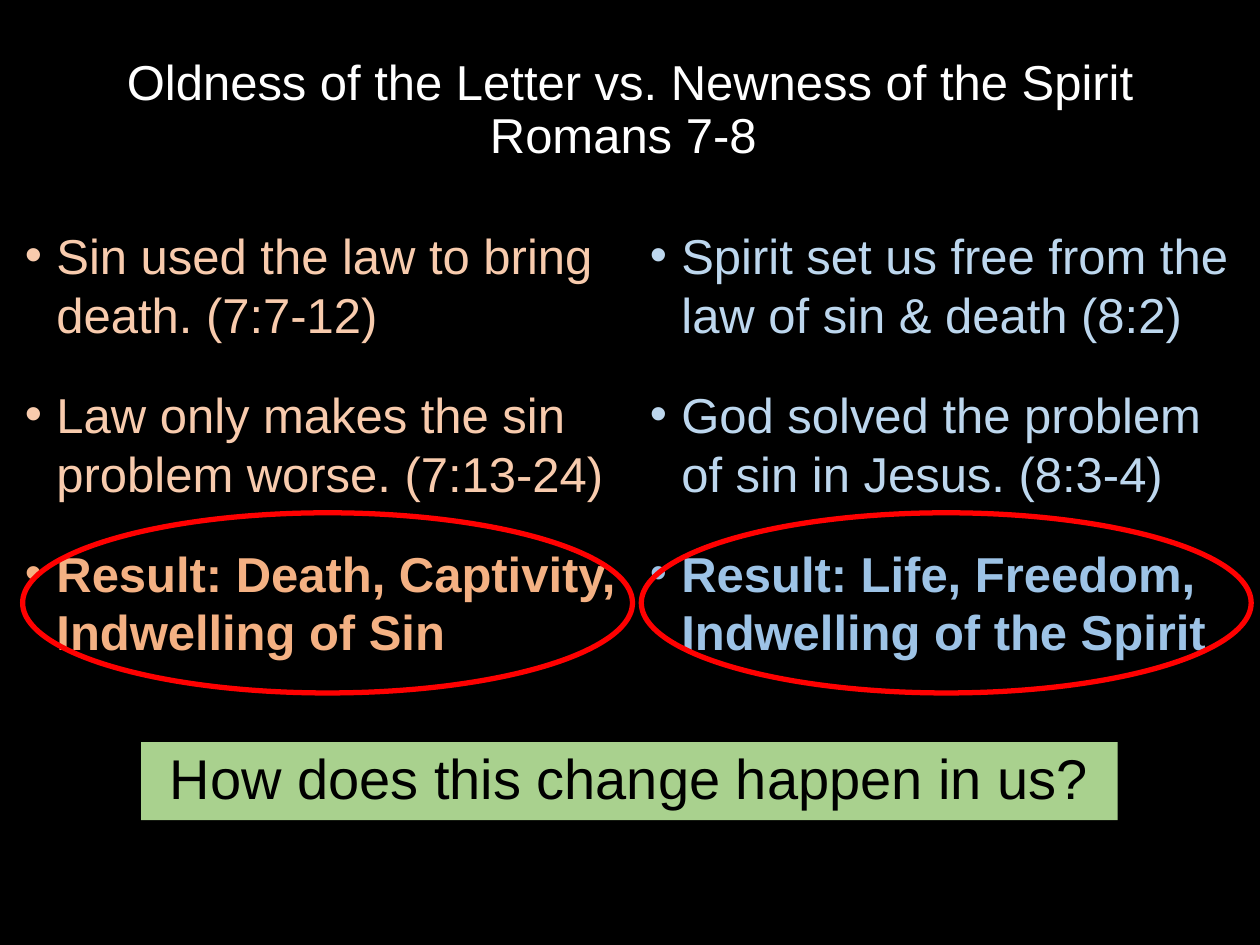
import pptx
import pptx.dml.color
import pptx.enum.shapes
import pptx.enum.text
import pptx.oxml.ns
import pptx.util
from lxml import etree

Inches = pptx.util.Inches
Pt = pptx.util.Pt
RGBColor = pptx.dml.color.RGBColor
Align = pptx.enum.text.PP_ALIGN
Anchor = pptx.enum.text.MSO_ANCHOR
ShapeType = pptx.enum.shapes.MSO_SHAPE

BLACK = RGBColor(0x00, 0x00, 0x00)
WHITE = RGBColor(0xFF, 0xFF, 0xFF)
PEACH = RGBColor(0xF8, 0xCB, 0xAD)
ORANGE = RGBColor(0xF4, 0xB1, 0x83)
PALE_BLUE = RGBColor(0xBD, 0xD7, 0xEE)
BLUE = RGBColor(0x9D, 0xC3, 0xE6)
GREEN = RGBColor(0xA9, 0xD1, 0x8E)
RED = RGBColor(0xFF, 0x00, 0x00)

LETTER_POINTS = [
    "Sin used the law to bring death. (7:7-12)",
    "Law only makes the sin problem worse. (7:13-24)",
    "Result: Death, Captivity, Indwelling of Sin",
]
SPIRIT_POINTS = [
    "Spirit set us free from the law of sin & death (8:2)",
    "God solved the problem of sin in Jesus. (8:3-4)",
    "Result: Life, Freedom, Indwelling of the Spirit",
]


def add_run(paragraph, text, color, size=28, bold=False):
    """Append one formatted run to the paragraph."""
    run = paragraph.add_run()
    run.text = text
    run.font.name = "Arial"
    run.font.size = Pt(size)
    run.font.bold = bold
    run.font.color.rgb = color


def add_bullet(paragraph):
    """Give the paragraph a round bullet with a hanging indent."""
    properties = paragraph._p.get_or_add_pPr()
    properties.set("marL", str(Inches(0.25)))
    properties.set("indent", str(-Inches(0.25)))
    font = etree.SubElement(properties, pptx.oxml.ns.qn("a:buFont"))
    font.set("typeface", "Arial")
    bullet = etree.SubElement(properties, pptx.oxml.ns.qn("a:buChar"))
    bullet.set("char", "•")


def add_title(slide, left, top, width, height):
    """Place the centred two-line title in the given box."""
    frame = slide.shapes.add_textbox(left, top, width, height).text_frame
    frame.word_wrap = True
    frame.vertical_anchor = Anchor.MIDDLE
    paragraph = frame.paragraphs[0]
    paragraph.alignment = Align.CENTER
    paragraph.line_spacing = 0.9
    add_run(paragraph, "Oldness of the Letter vs. Newness of the Spirit", WHITE)
    paragraph.add_line_break()
    add_run(paragraph, "Romans 7-8 ", WHITE)


def add_column(slide, left, top, width, height, points, color, result_color):
    """Place a bulleted column whose last point is the bold result."""
    frame = slide.shapes.add_textbox(left, top, width, height).text_frame
    frame.word_wrap = True
    for index, text in enumerate(points):
        paragraph = frame.add_paragraph() if index else frame.paragraphs[0]
        paragraph.space_before = Pt(10)
        paragraph.space_after = Pt(13.5)
        add_bullet(paragraph)
        is_result = index == len(points) - 1
        add_run(paragraph, text, result_color if is_result else color, bold=is_result)


def add_question(slide, left, top, width, height):
    """Place the closing question on a green panel."""
    shape = slide.shapes.add_shape(ShapeType.RECTANGLE, left, top, width, height)
    shape.shadow.inherit = False
    shape.fill.solid()
    shape.fill.fore_color.rgb = GREEN
    shape.line.fill.background()
    frame = shape.text_frame
    frame.word_wrap = True
    frame.vertical_anchor = Anchor.MIDDLE
    frame.margin_left = frame.margin_right = Inches(0.07)
    frame.margin_top = frame.margin_bottom = Inches(0.04)
    paragraph = frame.paragraphs[0]
    paragraph.alignment = Align.CENTER
    paragraph.line_spacing = 0.9
    paragraph.space_before = Pt(10)
    add_run(paragraph, "How does this change happen in us?", BLACK, size=32)


def add_result_ring(slide, left, top, width, height):
    """Place a red ring around a result."""
    shape = slide.shapes.add_shape(ShapeType.OVAL, left, top, width, height)
    shape.shadow.inherit = False
    shape.fill.background()
    shape.line.color.rgb = RED
    shape.line.width = Pt(3)


def main():
    """Build and save the slide."""
    presentation = pptx.Presentation()
    presentation.slide_width = Inches(10)
    presentation.slide_height = Inches(7.5)
    slide = presentation.slides.add_slide(presentation.slide_layouts[6])
    slide.background.fill.solid()
    slide.background.fill.fore_color.rgb = BLACK

    add_title(slide, Inches(0.69), Inches(0.37), Inches(8.62), Inches(1.02))
    add_column(slide, Inches(0.1), Inches(1.74), Inches(4.96), Inches(4.18),
               LETTER_POINTS, PEACH, ORANGE)
    add_column(slide, Inches(5.06), Inches(1.74), Inches(4.84), Inches(4.18),
               SPIRIT_POINTS, PALE_BLUE, BLUE)
    add_question(slide, Inches(1.12), Inches(5.89), Inches(7.75), Inches(0.62))
    for left in (0.18, 5.09):
        add_result_ring(slide, Inches(left), Inches(4.07), Inches(4.84), Inches(1.43))

    presentation.save("out.pptx")


if __name__ == "__main__":
    main()
